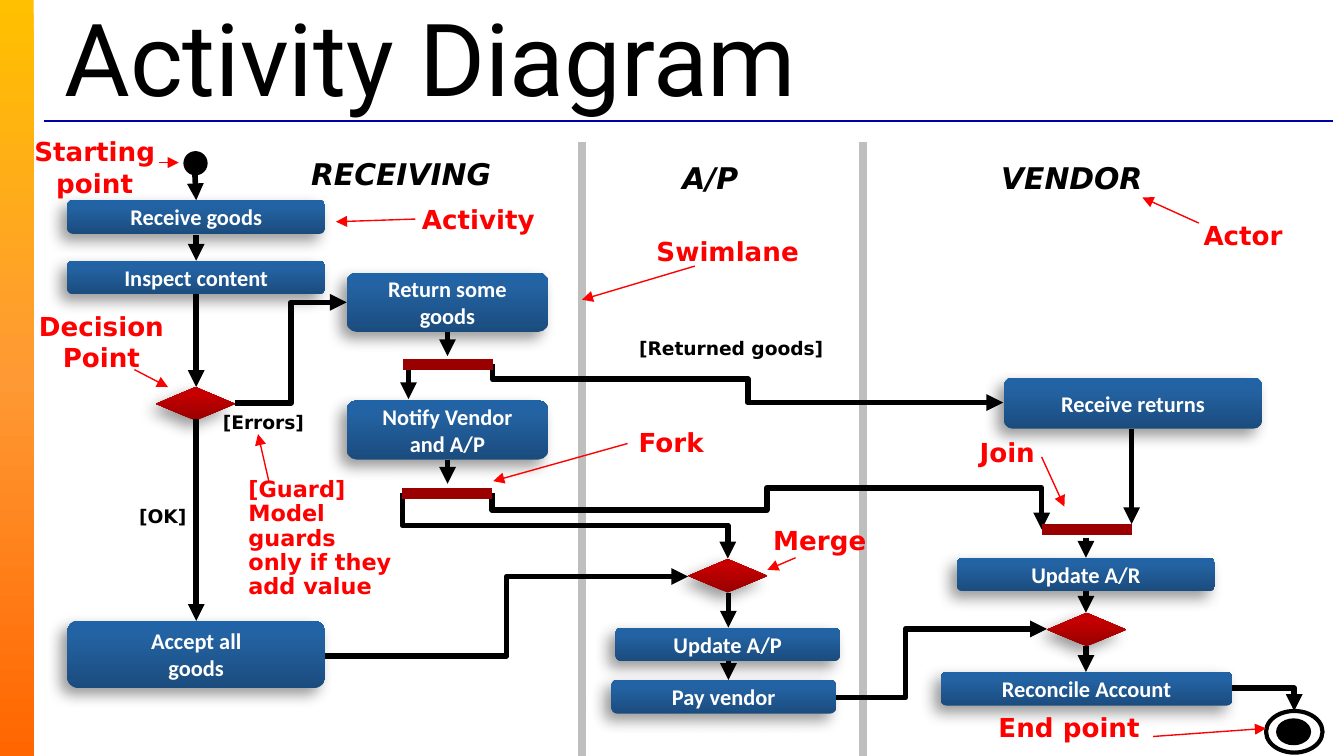
from copy import deepcopy
from typing import NamedTuple

from lxml import etree
from pptx import Presentation
from pptx.dml.color import RGBColor
from pptx.enum.shapes import MSO_CONNECTOR, MSO_SHAPE
from pptx.enum.text import MSO_ANCHOR, MSO_AUTO_SIZE, PP_ALIGN
from pptx.oxml.ns import qn
from pptx.util import Cm, Pt

STRAIGHT, ELBOW = MSO_CONNECTOR.STRAIGHT, MSO_CONNECTOR.ELBOW
RECTANGLE, ROUNDED = MSO_SHAPE.RECTANGLE, MSO_SHAPE.ROUNDED_RECTANGLE
DIAMOND, OVAL = MSO_SHAPE.DIAMOND, MSO_SHAPE.OVAL
LEFT, CENTER = PP_ALIGN.LEFT, PP_ALIGN.CENTER
TOP, MIDDLE = MSO_ANCHOR.TOP, MSO_ANCHOR.MIDDLE
GROW, FIXED = MSO_AUTO_SIZE.SHAPE_TO_FIT_TEXT, MSO_AUTO_SIZE.NONE

PAGE_WIDTH = 10
PAGE_HEIGHT = PAGE_WIDTH * 9 / 16
BLACK = RGBColor(0x00, 0x00, 0x00)
WHITE = RGBColor(0xFF, 0xFF, 0xFF)
RED = RGBColor(0xFF, 0x00, 0x00)
BAR_RED = RGBColor(0x9A, 0x00, 0x00)
LANE_GRAY = RGBColor(0xBF, 0xBF, 0xBF)
RULE_BLUE = RGBColor(0x00, 0x00, 0xA5)
SUNSET = [(0, RGBColor(0xFF, 0xC0, 0x00)), (0.5, RGBColor(0xFF, 0x99, 0x33)),
          (1, RGBColor(0xFF, 0x66, 0x00))]
BLUES = [(0, RGBColor(0x1B, 0x4C, 0x7E)), (0.8, RGBColor(0x23, 0x63, 0xA3)),
         (1, RGBColor(0x20, 0x63, 0xA6))]
REDS = [(0, RGBColor(0x98, 0x00, 0x00)), (0.8, RGBColor(0xC6, 0x00, 0x00)),
        (1, RGBColor(0xC7, 0x00, 0x00))]
UPWARD, DOWNWARD = 90, 270


class Box(NamedTuple):
    left: float
    top: float
    width: float
    height: float


class Segment(NamedTuple):
    x1: float
    y1: float
    x2: float
    y2: float


class Bend(NamedTuple):
    box: Box
    preset: str
    adjustments: tuple = ()
    rotation: int = 0
    flip: str = ""


class Label(NamedTuple):
    text: str
    box: Box
    wrap: bool = True


ACTIVITIES = [
    Label("Receive goods", Box(0.5, 1.49, 1.92, 0.25)),
    Label("Inspect content", Box(0.5, 1.94, 1.92, 0.25)),
    Label("Return some\vgoods", Box(2.58, 2.03, 1.5, 0.44)),
    Label("Notify Vendor\vand A/P", Box(2.58, 2.98, 1.5, 0.44)),
    Label("Accept all\vgoods", Box(0.5, 4.62, 1.92, 0.5)),
    Label("Pay vendor", Box(4.55, 5.06, 1.67, 0.25)),
    Label("Update A/P", Box(4.58, 4.67, 1.67, 0.25)),
    Label("Receive returns", Box(7.47, 2.81, 1.92, 0.38)),
    Label("Update A/R", Box(7.12, 4.15, 1.92, 0.25)),
    Label("Reconcile Account", Box(7, 5, 2.17, 0.25)),
]
DECISIONS = [Box(left, top, 0.59, 0.25)
             for left, top in ((1.16, 2.88), (5.12, 4.16), (7.79, 4.56))]
FLOWS = [
    Segment(1.45, 1.29, 1.46, 1.49), Segment(1.46, 1.75, 1.46, 1.94),
    Segment(1.46, 2.19, 1.46, 2.88), Segment(1.46, 3.12, 1.46, 4.62),
    Segment(3.33, 2.47, 3.33, 2.65), Segment(3.04, 2.69, 3.04, 2.97),
    Segment(3.33, 3.42, 3.33, 3.6), Segment(5.42, 4.41, 5.42, 4.67),
    Segment(5.42, 4.92, 5.42, 5.06), Segment(8.42, 3.19, 8.42, 3.9),
    Segment(8.08, 4, 8.08, 4.15), Segment(8.08, 4.4, 8.08, 4.56),
    Segment(8.08, 4.81, 8.08, 5),
]
BENDS = [
    Bend(Box(1.75, 2.25, 0.83, 0.75), "bentConnector3", (0.5,), flip="flipV"),
    Bend(Box(5.42, 0.95, 0.29, 3.8), "bentConnector4", (0.4, 0.5), 270, "flipH"),
    Bend(Box(2.42, 4.29, 2.7, 0.59), "bentConnector3", (0.5,), flip="flipV"),
    Bend(Box(6.22, 4.68, 1.57, 0.51), "bentConnector3", (0.33,), flip="flipV"),
    Bend(Box(3.96, 2.7, 0.49, 2.42), "bentConnector3", (0.5,), 270, "flipH"),
    Bend(Box(5.57, 1.76, 0.27, 4.09), "bentConnector5", (0.46, 0.5, -0.15), 270, "flipH"),
    Bend(Box(9.17, 5.12, 0.46, 0.17), "bentConnector2"),
]
SYNC_BARS = [Segment(3, 2.71, 3.67, 2.71), Segment(2.99, 3.67, 3.66, 3.67),
             Segment(7.75, 3.94, 8.42, 3.94)]
LANES = [
    Label("RECEIVING", Box(2.17, 1.06, 1.63, 0.47), False),
    Label("A/P", Box(4.94, 1.09, 0.69, 0.47), False),
    Label("VENDOR", Box(7.34, 1.09, 1.27, 0.47), False),
]
CONDITIONS = [
    Label("[OK]", Box(0.92, 3.67, 0.58, 0.37), False),
    Label("[Errors]", Box(1.54, 2.97, 0.84, 0.37), False),
    Label("[Returned goods]", Box(4.64, 2.42, 1.6, 0.37), False),
]
NOTES = [
    Label("Starting point", Box(0.12, 0.91, 1.17, 0.67)),
    Label("Activity", Box(3.04, 1.41, 1.04, 0.44), False),
    Label("Decision Point", Box(0.17, 2.21, 1.17, 0.67)),
    Label("End point", Box(7.33, 5.19, 1.25, 0.44), False),
    Label("Swimlane", Box(4.58, 1.65, 1.67, 0.44)),
    Label("Fork", Box(4.58, 3.07, 0.83, 0.44)),
    Label("Join", Box(7.08, 3.15, 0.83, 0.44)),
    Label("Actor", Box(8.75, 1.53, 1, 0.44)),
    Label("Merge", Box(5.6, 3.8, 1, 0.44)),
]
GUARD = Label("[Guard] Model guards\nonly if they add value", Box(1.75, 3.46, 1.42, 1.11))
POINTERS = [
    Segment(2, 3.58, 1.92, 3.23), Segment(1.18, 1.21, 1.33, 1.21),
    Segment(5.17, 1.98, 4.33, 2.23), Segment(1, 2.75, 1.25, 2.88),
    Segment(8.58, 5.48, 9.42, 5.42), Segment(3.09, 1.63, 2.5, 1.65),
    Segment(4.67, 3.3, 3.67, 3.58), Segment(7.75, 3.4, 7.92, 3.77),
    Segment(8.92, 1.66, 8.5, 1.47), Segment(5.92, 4.15, 5.71, 4.24),
]


def grid(units: float) -> Cm:
    return Cm(units * 2.54)


def write(frame, text: str, *, size: float, color: RGBColor, font: str = "DejaVu Sans",
          bold: bool = True, italic: bool = False, align=CENTER, anchor=TOP,
          wrap: bool = True, fit=GROW, spacing: float = 1.0) -> None:
    frame.word_wrap, frame.auto_size, frame.vertical_anchor = wrap, fit, anchor
    frame.margin_left = frame.margin_right = grid(0.1)
    frame.margin_top = frame.margin_bottom = grid(0.1)
    for index, content in enumerate(text.split("\n")):
        paragraph = frame.add_paragraph() if index else frame.paragraphs[0]
        paragraph.text = content
        paragraph.alignment, paragraph.line_spacing = align, spacing
        for run in paragraph.runs:
            run.font.name, run.font.size = font, Pt(size)
            run.font.bold, run.font.italic = bold, italic
            run.font.color.rgb = color
        for line_break in paragraph._p.findall(qn("a:br")):
            line_break.append(deepcopy(paragraph.runs[0]._r.find(qn("a:rPr"))))


def add_label(slide, label: Label, **style) -> None:
    area = slide.shapes.add_textbox(*map(grid, label.box))
    write(area.text_frame, label.text, wrap=label.wrap, **style)


def add_figure(slide, kind, box: Box):
    figure = slide.shapes.add_shape(kind, *map(grid, box))
    figure.shadow.inherit = False
    figure.line.fill.background()
    return figure


def add_gradient(slide, kind, box: Box, stops: list, angle: int, shadow: bool = True):
    figure = add_figure(slide, kind, box)
    figure.fill.gradient()
    figure.fill.gradient_angle = angle
    properties = figure._element.spPr
    stop_list = properties.find(qn("a:gradFill")).find(qn("a:gsLst"))
    stop_list.append(deepcopy(stop_list[0]))
    for stop, (position, color) in zip(figure.fill.gradient_stops, stops):
        stop.position, stop.color.rgb = position, color
    if shadow:
        outer = etree.SubElement(properties.find(qn("a:effectLst")), qn("a:outerShdw"),
                                 blurRad=str(Pt(8)), dist=str(Pt(5)), dir="8100000")
        tint = etree.SubElement(outer, qn("a:srgbClr"), val=str(BLACK))
        etree.SubElement(tint, qn("a:alpha"), val="40000")
    return figure


def add_line(slide, segment: Segment, color: RGBColor, width: float,
             arrow: bool = False, kind=STRAIGHT):
    line = slide.shapes.add_connector(kind, *map(grid, segment))
    line.line.color.rgb, line.line.width = color, Pt(width)
    if arrow:
        etree.SubElement(line.line._get_or_add_ln(), qn("a:tailEnd"), type="triangle")
    etree.SubElement(line._element.spPr, qn("a:effectLst"))
    return line


def add_bend(slide, bend: Bend) -> None:
    left, top, width, height = bend.box
    route = Segment(left, top, left + width, top + height)
    properties = add_line(slide, route, BLACK, 3, True, ELBOW)._element.spPr
    frame, geometry = properties.find(qn("a:xfrm")), properties.find(qn("a:prstGeom"))
    if bend.rotation:
        frame.set("rot", str(bend.rotation * 60000))
    if bend.flip:
        frame.set(bend.flip, "1")
    geometry.set("prst", bend.preset)
    for index, share in enumerate(bend.adjustments, 1):
        etree.SubElement(geometry.find(qn("a:avLst")), qn("a:gd"),
                         name=f"adj{index}", fmla=f"val {round(share * 100000)}")


def add_dot(slide, box: Box, width: float, filled: bool = True) -> None:
    dot = add_figure(slide, OVAL, box)
    if filled:
        dot.fill.solid()
        dot.fill.fore_color.rgb = BLACK
    else:
        dot.fill.background()
    dot.line.color.rgb, dot.line.width = BLACK, Pt(width)


def main() -> None:
    deck = Presentation()
    deck.slide_width, deck.slide_height = grid(PAGE_WIDTH), grid(PAGE_HEIGHT)
    slide = deck.slides.add_slide(deck.slide_layouts[6])
    add_gradient(slide, RECTANGLE, Box(0, 0, 0.25, PAGE_HEIGHT), SUNSET, DOWNWARD, False)
    add_line(slide, Segment(0.33, 0.9, 9.92, 0.9), RULE_BLUE, 0.75)
    add_label(slide, Label("Activity Diagram", Box(0.38, 0.15, 9.58, 0.53)), size=54,
              color=BLACK, font="Roboto", bold=False, align=LEFT, anchor=MIDDLE, fit=FIXED)
    for x in (4.33, 6.42):
        add_line(slide, Segment(x, 1.06, x, PAGE_HEIGHT), LANE_GRAY, 4.5)
    add_dot(slide, Box(1.37, 1.13, 0.17, 0.17), 0.75)
    add_dot(slide, Box(9.5, 5.35, 0.25, 0.19), 0.75)
    add_dot(slide, Box(9.42, 5.29, 0.42, 0.31), 2.25, filled=False)
    for decision in DECISIONS:
        add_gradient(slide, DIAMOND, decision, REDS, UPWARD)
    for activity in ACTIVITIES:
        step = add_gradient(slide, ROUNDED, activity.box, BLUES, UPWARD)
        write(step.text_frame, activity.text, size=12, color=WHITE, font="Calibri",
              anchor=MIDDLE, wrap=False, fit=FIXED)
    for flow in FLOWS:
        add_line(slide, flow, BLACK, 3, arrow=True)
    for bend in BENDS:
        add_bend(slide, bend)
    for bar in SYNC_BARS:
        add_line(slide, bar, BAR_RED, 6)
    for lane in LANES:
        add_label(slide, lane, size=16, color=BLACK, italic=True)
    for condition in CONDITIONS:
        add_label(slide, condition, size=10, color=BLACK)
    for note in NOTES:
        add_label(slide, note, size=14, color=RED)
    add_label(slide, GUARD, size=12, color=RED, align=LEFT, spacing=0.9)
    for pointer in POINTERS:
        add_line(slide, pointer, RED, 0.75, arrow=True)
    deck.save("out.pptx")


if __name__ == "__main__":
    main()
